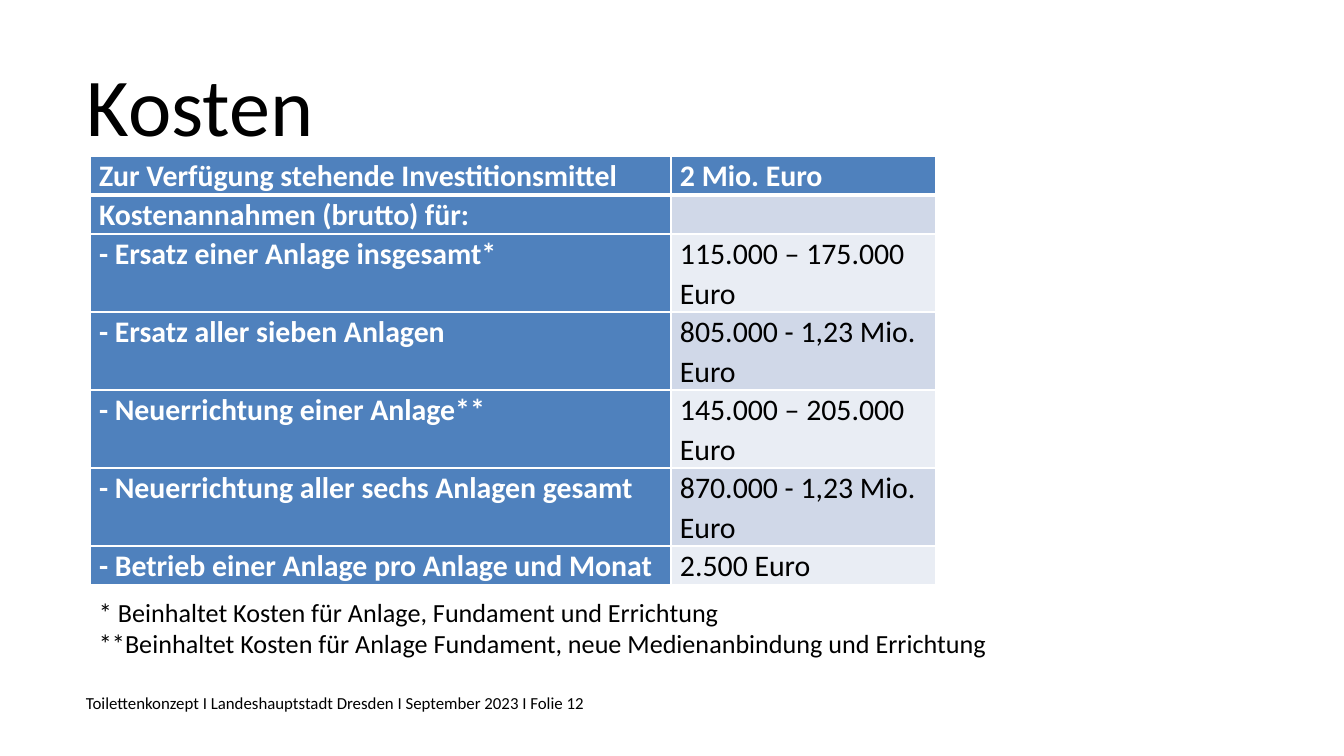
"""Build the cost slide of a public toilet plan."""
from lxml import etree
from pptx import Presentation, util as u
from pptx.dml.color import RGBColor
from pptx.enum import text as t
from pptx.oxml.ns import qn

TITLE = "Kosten"
FOOTER = "Toilettenkonzept I Landeshauptstadt Dresden I September 2023 I Folie 12"
NOTES = [
    "* Beinhaltet Kosten für Anlage, Fundament und Errichtung",
    "**Beinhaltet Kosten für Anlage Fundament, neue Medienanbindung und Errichtung",
]
COSTS = [
    ("Zur Verfügung stehende Investitionsmittel", "2 Mio. Euro", 1),
    ("Kostenannahmen (brutto) für:", "", 1),
    ("- Ersatz einer Anlage insgesamt*", "115.000 – 175.000 Euro", 2),
    ("- Ersatz aller sieben Anlagen", "805.000 - 1,23 Mio. Euro", 2),
    ("- Neuerrichtung einer Anlage**", "145.000 – 205.000 Euro", 2),
    ("- Neuerrichtung aller sechs Anlagen gesamt", "870.000 - 1,23 Mio. Euro", 2),
    ("- Betrieb einer Anlage pro Anlage und Monat", "2.500 Euro", 1),
]
HUES = {"ink": "000000", "white": "FFFFFF", "head": "4F81BD",
        "odd": "D0D8E8", "even": "E9EDF4"}
WIDTHS = [581, 265]
LINE = 39


def px(n):
    return u.Emu(round(n * 914400 / 134.4))


def write(frame, lines, size=16, hue="ink", bold=False, lead=None):
    for i, line in enumerate(lines):
        para = frame.add_paragraph() if i else frame.paragraphs[0]
        if lead:
            para.line_spacing = lead
        if not line:
            etree.SubElement(para._p, qn("a:endParaRPr"), sz=str(size * 100))
            continue
        run = para.add_run()
        run.text = line
        run.font.name = "Calibri"
        run.font.size = u.Pt(size)
        run.font.bold = bold
        run.font.color.rgb = RGBColor.from_string(HUES[hue])


def box(slide, lines, area, pad, anchor=t.MSO_ANCHOR.TOP, **form):
    frame = slide.shapes.add_textbox(*map(px, area)).text_frame
    frame.word_wrap = True
    frame.vertical_anchor = anchor
    (frame.margin_left, frame.margin_top,
     frame.margin_right, frame.margin_bottom) = map(px, pad)
    write(frame, lines, **form)


def edge(cell, side, width):
    line = etree.SubElement(cell._tc.get_or_add_tcPr(), qn("a:ln" + side),
                            w=str(u.Pt(width)))
    fill = etree.SubElement(line, qn("a:solidFill"))
    etree.SubElement(fill, qn("a:srgbClr"), val=HUES["white"])


def grid(slide, left, top):
    high = LINE * sum(row[2] for row in COSTS)
    table = slide.shapes.add_table(
        len(COSTS), 2, px(left), px(top), px(sum(WIDTHS)), px(high)).table
    for col, wide in zip(table.columns, WIDTHS):
        col.width = px(wide)
    for r, (*words, count) in enumerate(COSTS):
        table.rows[r].height = px(LINE * count)
        for c, word in enumerate(words):
            cell = table.cell(r, c)
            head = r == 0 or c == 0
            cell.margin_left = cell.margin_right = px(9)
            cell.margin_top = cell.margin_bottom = 0
            for side in "LRTB":
                thick = (r, side) in [(0, "B"), (1, "T")]
                edge(cell, side, 3 if thick else 1)
            cell.fill.solid()
            hue = "head" if head else "odd" if r % 2 else "even"
            cell.fill.fore_color.rgb = RGBColor.from_string(HUES[hue])
            write(cell.text_frame, [word], bold=head, lead=1.07,
                  hue="white" if head else "ink")


def main():
    deck = Presentation()
    deck.slide_width, deck.slide_height = px(1344), px(756)
    slide = deck.slides.add_slide(deck.slide_layouts[6])
    box(slide, [TITLE], (2, 42, 1346, 117), (85, 6, 85, 6),
        anchor=t.MSO_ANCHOR.BOTTOM, size=44)
    box(slide, [FOOTER], (1, 695, 1348, 62), (85, 7, 85, 32), size=9)
    grid(slide, 90, 156)
    box(slide, NOTES, (86, 589, 1146, 77), (13, 7, 13, 7), size=14)
    deck.save("out.pptx")


if __name__ == "__main__":
    main()
